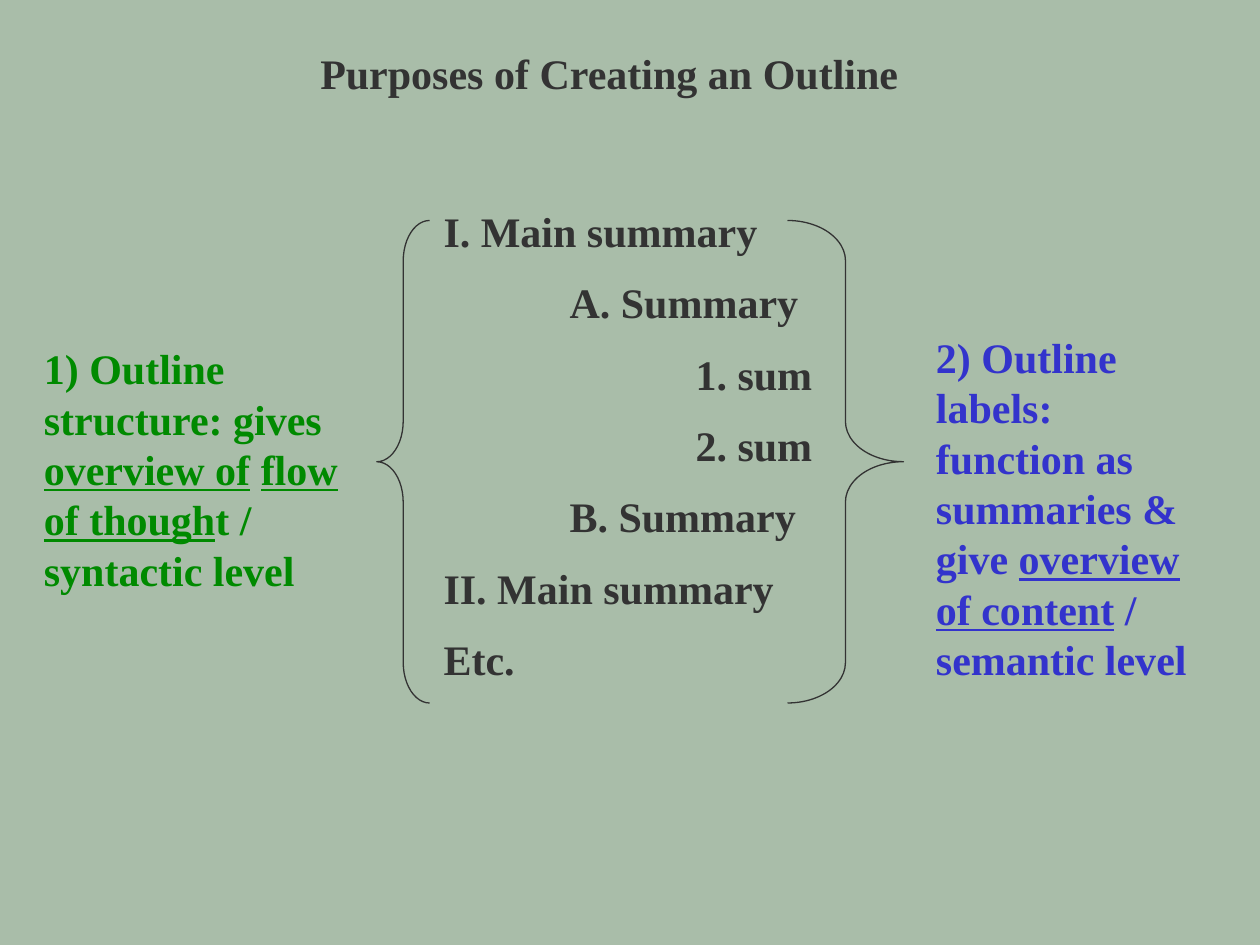
from pptx import Presentation
from pptx.dml.color import RGBColor
from pptx.enum.shapes import MSO_SHAPE
from pptx.enum.text import MSO_ANCHOR, MSO_AUTO_SIZE, PP_ALIGN
from pptx.oxml.ns import qn
from pptx.util import Inches, Pt

LEFT_BRACE, RIGHT_BRACE = MSO_SHAPE.LEFT_BRACE, MSO_SHAPE.RIGHT_BRACE
TOP, FIT_NONE = MSO_ANCHOR.TOP, MSO_AUTO_SIZE.NONE
LEFT, CENTER = PP_ALIGN.LEFT, PP_ALIGN.CENTER

FONT, SIZE = "Times New Roman", 24
BACKGROUND, DARK, GREEN, BLUE = "A9BDA9", "333333", "008A00", "3333CC"
LEVEL_INDENT = 1

TITLE = "Purposes of Creating an Outline"
TITLE_BOX = (1.17, 0.33, 7.33, 0.5)

# (level, text)
OUTLINE = [
    (0, "I. Main summary"),
    (1, "A. Summary"),
    (2, "1. sum"),
    (2, "2. sum"),
    (1, "B. Summary"),
    (0, "II. Main summary"),
    (0, "Etc."),
]
OUTLINE_BOX = (3.42, 1.58, 3.5, 4.14)

# (box, colour, [(text, underlined)])
PURPOSES = [
    ((0.25, 2.67, 2.83, 2.12), GREEN, [
        ("1) Outline structure: gives ", False),
        ("overview of", True),
        (" ", False),
        ("flow of though", True),
        ("t / syntactic level", False),
    ]),
    ((7.33, 2.58, 2.33, 2.93), BLUE, [
        ("2) Outline labels: function as summaries & give ", False),
        ("overview of content", True),
        (" / semantic level", False),
    ]),
]

# (shape, box, curve depth)
BRACES = [
    (LEFT_BRACE, (2.99, 1.75, 0.42, 3.83), 0.767),
    (RIGHT_BRACE, (6.25, 1.75, 0.92, 3.83), 0.348),
]


def rgb(color):
    return RGBColor.from_string(color)


def inches(box):
    return [Inches(length) for length in box]


def place(placeholder, box):
    placeholder.left, placeholder.top, placeholder.width, placeholder.height = inches(box)


def prepare(frame):
    frame.word_wrap = True
    frame.auto_size = FIT_NONE
    frame.vertical_anchor = TOP


def style(font, color):
    font.name, font.size, font.bold = FONT, Pt(SIZE), True
    font.color.rgb = rgb(color)


def indent(paragraph, level):
    """Set a plain left margin for the level, without a bullet."""
    properties = paragraph._p.get_or_add_pPr()
    properties.set("marL", str(Inches(level * LEVEL_INDENT)))
    properties.set("indent", "0")
    properties.append(properties.makeelement(qn("a:buNone"), {}))


def add_title(slide):
    title = slide.shapes.title
    place(title, TITLE_BOX)
    prepare(title.text_frame)
    title.text_frame.text = TITLE
    paragraph = title.text_frame.paragraphs[0]
    paragraph.alignment = CENTER
    style(paragraph.runs[0].font, DARK)


def add_outline(slide):
    body = slide.placeholders[1]
    place(body, OUTLINE_BOX)
    frame = body.text_frame
    prepare(frame)
    frame.text = "\n".join(text for _, text in OUTLINE)
    for i, (paragraph, (level, _)) in enumerate(zip(frame.paragraphs, OUTLINE)):
        indent(paragraph, level)
        paragraph.alignment = LEFT
        paragraph.space_before = Pt(SIZE / 2 if i else 0)
        style(paragraph.runs[0].font, DARK)


def add_purpose(slide, box, color, parts):
    frame = slide.shapes.add_textbox(*inches(box)).text_frame
    prepare(frame)
    for text, underlined in parts:
        run = frame.paragraphs[0].add_run()
        run.text = text
        style(run.font, color)
        run.font.underline = underlined


def add_brace(slide, kind, box, depth):
    brace = slide.shapes.add_shape(kind, *inches(box))
    brace.adjustments[0] = depth
    brace.shadow.inherit = False
    brace.fill.background()
    brace.line.color.rgb = rgb(DARK)
    brace.line.width = Pt(0.75)


def main():
    deck = Presentation()
    deck.slide_width, deck.slide_height = Inches(10), Inches(7.5)
    slide = deck.slides.add_slide(deck.slide_layouts[1])
    slide.background.fill.solid()
    slide.background.fill.fore_color.rgb = rgb(BACKGROUND)
    add_title(slide)
    add_outline(slide)
    for brace in BRACES:
        add_brace(slide, *brace)
    for purpose in PURPOSES:
        add_purpose(slide, *purpose)
    deck.save("out.pptx")


if __name__ == "__main__":
    main()
